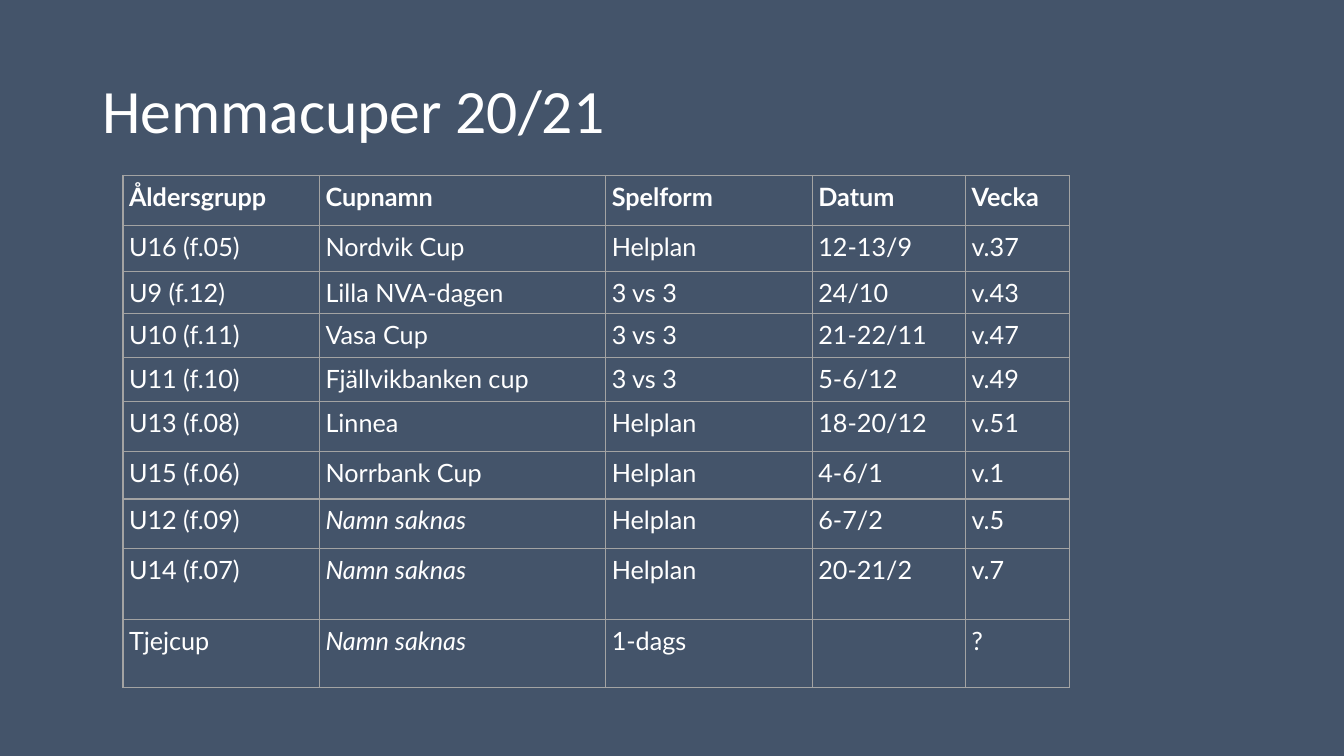
from lxml.etree import SubElement
from pptx import Presentation
from pptx.dml.color import RGBColor
from pptx.enum.text import MSO_ANCHOR
from pptx.oxml.ns import qn
from pptx.util import Inches, Pt

UNIT = 1 / 12  # the slide is a grid of 160 columns by 90 rows


def grid(cells):
    return Inches(cells * UNIT)


def color(hex_string):
    return RGBColor.from_string(hex_string)


class CupSlide:
    background, ink, rule = "44546A", "FFFFFF", "A3A3A3"
    title_format = {"name": "Calibri", "size": Pt(44)}
    cell_format = {"name": "Lato", "size": Pt(18)}
    cell_margin = Inches(0.06)

    def __init__(self, deck):
        self.slide = deck.slides.add_slide(deck.slide_layouts[6])
        fill = self.slide.background.fill
        fill.solid()
        fill.fore_color.rgb = color(self.background)

    def add_text(self, paragraph, text, formats):
        run = paragraph.add_run()
        run.text = text
        for attribute, value in formats.items():
            setattr(run.font, attribute, value)
        run.font.color.rgb = color(self.ink)

    def title(self, text, left, top, width, height):
        heading = self.slide.shapes.add_textbox(
            grid(left), grid(top), grid(width), grid(height)).text_frame
        heading.word_wrap = True
        heading.vertical_anchor = MSO_ANCHOR.MIDDLE
        heading.paragraphs[0].line_spacing = 0.9
        self.add_text(heading.paragraphs[0], text, self.title_format)

    def border(self, cell):
        properties = cell._tc.get_or_add_tcPr()
        for side in ("lnL", "lnR", "lnT", "lnB"):
            line = SubElement(properties, qn(f"a:{side}"), w=str(Pt(1)))
            solid = SubElement(line, qn("a:solidFill"))
            SubElement(solid, qn("a:srgbClr"), val=self.rule)

    def table(self, records, left, top, widths, heights):
        schedule = self.slide.shapes.add_table(
            len(records), len(widths), grid(left), grid(top),
            grid(sum(widths)), grid(sum(heights))).table
        schedule.first_row = schedule.horz_banding = False
        for column, width in zip(schedule.columns, widths):
            column.width = grid(width)
        for row, height in zip(schedule.rows, heights):
            row.height = grid(height)
        for r, record in enumerate(records):
            for c, text in enumerate(record):
                cell = schedule.cell(r, c)
                for side in ("left", "right", "top", "bottom"):
                    setattr(cell, f"margin_{side}", self.cell_margin)
                self.border(cell)
                cell.fill.background()
                if text:
                    emphasis = {"bold": r == 0, "italic": text == MISSING}
                    self.add_text(cell.text_frame.paragraphs[0], text,
                                  self.cell_format | emphasis)


MISSING = "Namn saknas"
CUPS = [
    ("Åldersgrupp", "Cupnamn", "Spelform", "Datum", "Vecka"),
    ("U16 (f.05)", "Nordvik Cup", "Helplan", "12-13/9", "v.37"),
    ("U9 (f.12)", "Lilla NVA-dagen", "3 vs 3", "24/10", "v.43"),
    ("U10 (f.11)", "Vasa Cup", "3 vs 3", "21-22/11", "v.47"),
    ("U11 (f.10)", "Fjällvikbanken cup", "3 vs 3", "5-6/12", "v.49"),
    ("U13 (f.08)", "Linnea", "Helplan", "18-20/12", "v.51"),
    ("U15 (f.06)", "Norrbank Cup", "Helplan", "4-6/1", "v.1"),
    ("U12 (f.09)", MISSING, "Helplan", "6-7/2", "v.5"),
    ("U14 (f.07)", MISSING, "Helplan", "20-21/2", "v.7"),
    ("Tjejcup", MISSING, "1-dags", "", "?"),
]


def main():
    deck = Presentation()
    deck.slide_width, deck.slide_height = grid(160), grid(90)
    page = CupSlide(deck)

    # Heading
    page.title("Hemmacuper 20/21", 11, 4.8, 138, 17.4)

    # Cup schedule
    page.table(CUPS, 14.64, 20.88,
               widths=(23.4, 34.08, 24.6, 18.24, 12.36),
               heights=(6, 5.4, 4.92, 5.28, 5.16, 6, 5.64, 5.88, 8.52, 8.04))

    deck.save("out.pptx")


if __name__ == "__main__":
    main()
